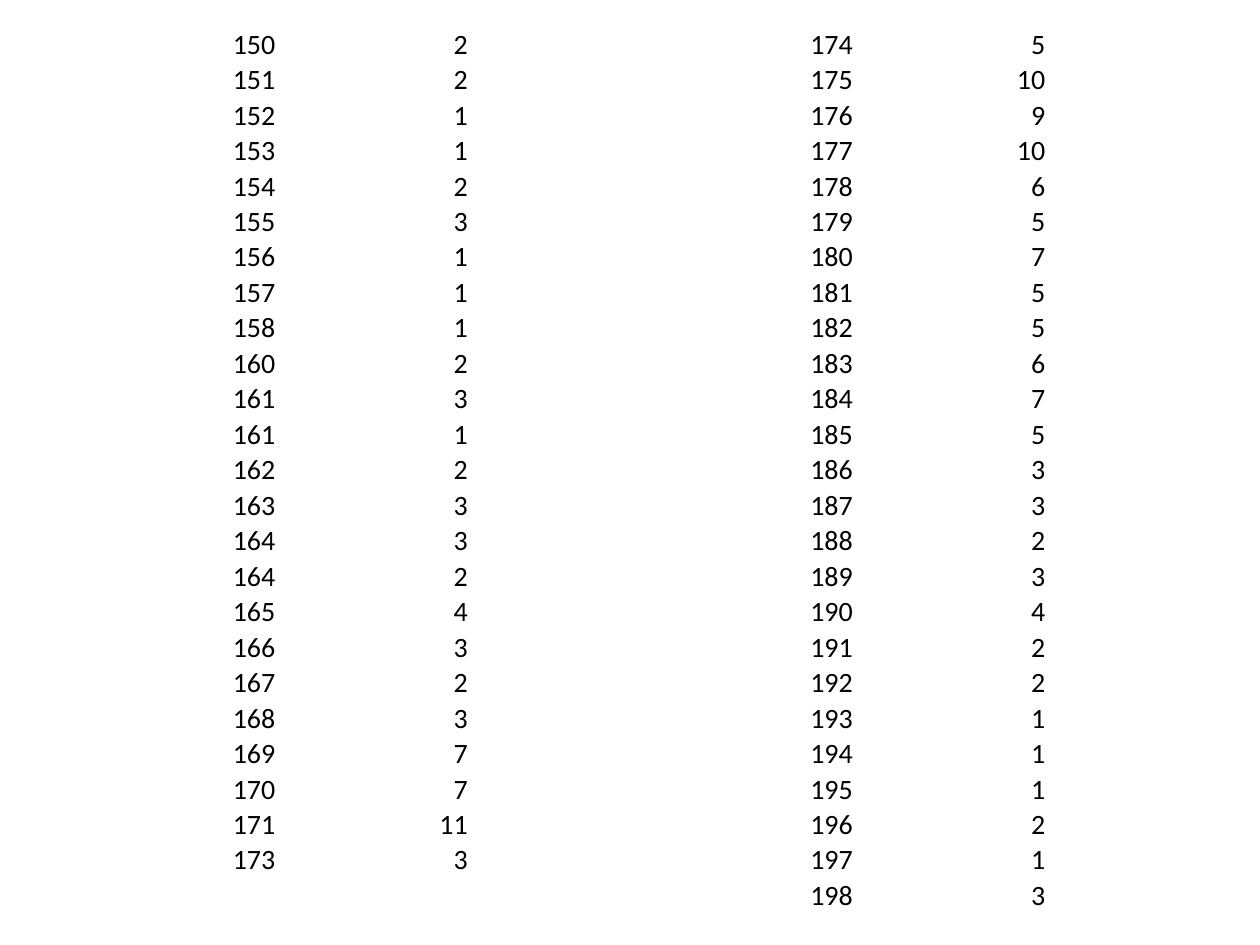
from dataclasses import dataclass
from itertools import zip_longest

from pptx import Presentation
from pptx.dml.color import RGBColor
from pptx.enum.text import MSO_ANCHOR, PP_ALIGN
from pptx.util import Pt

RIGHT = PP_ALIGN.RIGHT
BOTTOM = MSO_ANCHOR.BOTTOM
BLANK_LAYOUT = 6


@dataclass(frozen=True)
class Theme:
    font: str = "Calibri"
    size: float = 16
    ink: RGBColor = RGBColor(0, 0, 0)
    inset: float = 0.7


class PageBuilder:
    def __init__(self, page, theme):
        self.page = page
        self.theme = theme

    def table(self, rows, left, top, column_width, row_height):
        column_count = len(rows[0])
        frame = self.page.shapes.add_table(
            len(rows), column_count, Pt(left), Pt(top),
            Pt(column_width * column_count), Pt(row_height * len(rows)))
        table = frame.table
        table.first_row = False
        table.horz_banding = False
        for column in table.columns:
            column.width = Pt(column_width)
        for row, values in zip(table.rows, rows):
            row.height = Pt(row_height)
            for cell, value in zip(row.cells, values):
                self.fill_cell(cell, value)

    def fill_cell(self, cell, value):
        cell.fill.background()
        cell.vertical_anchor = BOTTOM
        cell.margin_left = cell.margin_right = cell.margin_top = Pt(self.theme.inset)
        cell.margin_bottom = 0
        cell.text = str(value)
        para = cell.text_frame.paragraphs[0]
        para.alignment = RIGHT
        para.font.name = self.theme.font
        para.font.size = Pt(self.theme.size)
        para.font.color.rgb = self.theme.ink


LOWER_VALUES = [*range(150, 159), 160, 161, *range(161, 165), *range(164, 172), 173]
LOWER_COUNTS = [2, 2, 1, 1, 2, 3, 1, 1, 1, 2, 3, 1,
                2, 3, 3, 2, 4, 3, 2, 3, 7, 7, 11, 3]
UPPER_VALUES = range(174, 199)
UPPER_COUNTS = [5, 10, 9, 10, 6, 5, 7, 5, 5, 6, 7, 5, 3,
                3, 2, 3, 4, 2, 2, 1, 1, 1, 2, 1, 3]


def main():
    deck = Presentation()
    deck.slide_width, deck.slide_height = Pt(720), Pt(540)
    page = deck.slides.add_slide(deck.slide_layouts[BLANK_LAYOUT])
    rows = list(zip_longest(LOWER_VALUES, LOWER_COUNTS, [],
                            UPPER_VALUES, UPPER_COUNTS, fillvalue=""))
    PageBuilder(page, Theme()).table(
        rows, left=48, top=15, column_width=110, row_height=19.84)
    deck.save("out.pptx")


if __name__ == "__main__":
    main()
